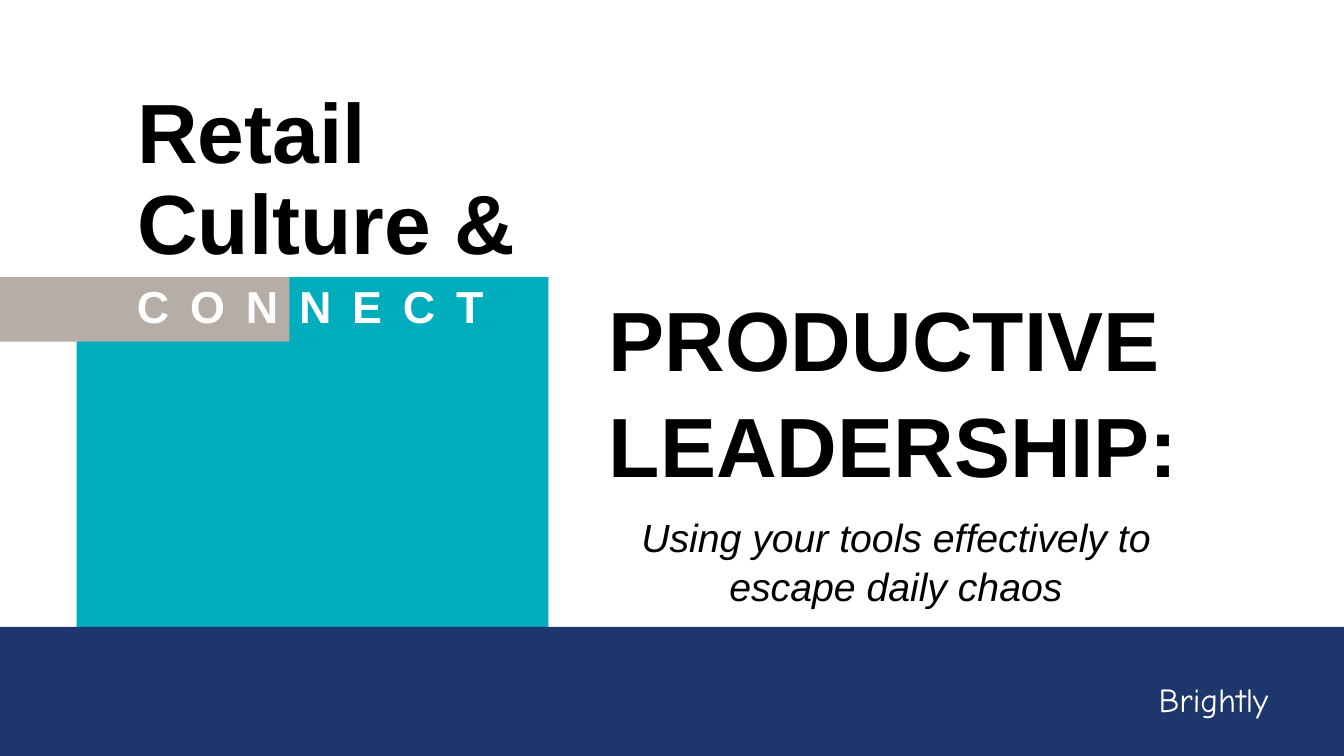
from pptx import Presentation
from pptx.dml.color import RGBColor
from pptx.enum.shapes import MSO_SHAPE
from pptx.enum.text import MSO_ANCHOR, PP_ALIGN
from pptx.util import Inches, Pt

COLORS = {"teal": "00ADBC", "taupe": "B5ADA6", "navy": "1D376C",
          "black": "000000", "white": "FFFFFF"}
WIDTH, HEIGHT = 13.33, 7.5
BAND_TOP, FOOTER_TOP = 2.75, 6.22

BLOCKS = [
    ("teal", 0.76, BAND_TOP, 4.68, FOOTER_TOP - BAND_TOP),
    ("taupe", 0, BAND_TOP, 2.87, 0.64),
    ("navy", 0, FOOTER_TOP, WIDTH, HEIGHT - FOOTER_TOP),
]
TITLE = ["Retail", "Culture &"]
TITLE_BOX = (1.26, 0.84, 12.07, 1.92)
CONNECT = "C O N N E C T"
CONNECT_BOX = (1.26, 2.72, 11.97, 0.64)
BRAND = "Brightly"
BRAND_BOX = (10.94, 6.69, 2.19, 0.5)
TOPIC = "PRODUCTIVE LEADERSHIP:"
TAGLINE = "Using your tools effectively to escape daily chaos"
TOPIC_BOX = (5.94, 2.75, 5.89, 3.23)


def style(p, text, size, color="black", font="Arial", bold=False,
          italic=False, align=PP_ALIGN.LEFT, spacing=None):
    p.text = text
    p.alignment = align
    p.line_spacing = spacing
    p.font.name, p.font.size = font, Pt(size)
    p.font.bold, p.font.italic = bold, italic
    p.font.color.rgb = RGBColor.from_string(COLORS[color])


def add_text(slide, box):
    tf = slide.shapes.add_textbox(*map(Inches, box)).text_frame
    tf.word_wrap = True
    return tf


prs = Presentation()
prs.slide_width, prs.slide_height = Inches(WIDTH), Inches(HEIGHT)
slide = prs.slides.add_slide(prs.slide_layouts[5])

for color, *box in BLOCKS:
    sp = slide.shapes.add_shape(MSO_SHAPE.RECTANGLE, *map(Inches, box))
    sp.shadow.inherit = False
    sp.fill.solid()
    sp.fill.fore_color.rgb = RGBColor.from_string(COLORS[color])
    sp.line.fill.background()

title = slide.shapes.title
title.left, title.top, title.width, title.height = map(Inches, TITLE_BOX)
tf = title.text_frame
tf.vertical_anchor = MSO_ANCHOR.TOP
for i, line in enumerate(TITLE):
    p = tf.add_paragraph() if i else tf.paragraphs[0]
    style(p, line, 60, bold=True, spacing=Pt(65))
    p.space_before = Pt(0)

p = add_text(slide, CONNECT_BOX).paragraphs[0]
style(p, CONNECT, 32, "white", bold=True)
p.runs[0].font._element.set("spc", "300")

p = add_text(slide, BRAND_BOX).paragraphs[0]
style(p, BRAND, 24, "white", "Comic Neue", align=PP_ALIGN.CENTER)

tf = add_text(slide, TOPIC_BOX)
p = tf.paragraphs[0]
style(p, TOPIC, 60, bold=True, spacing=1.05)
p.space_after = Pt(12)
style(tf.add_paragraph(), TAGLINE, 28, italic=True, align=PP_ALIGN.CENTER,
      spacing=1.05)

prs.save("out.pptx")
